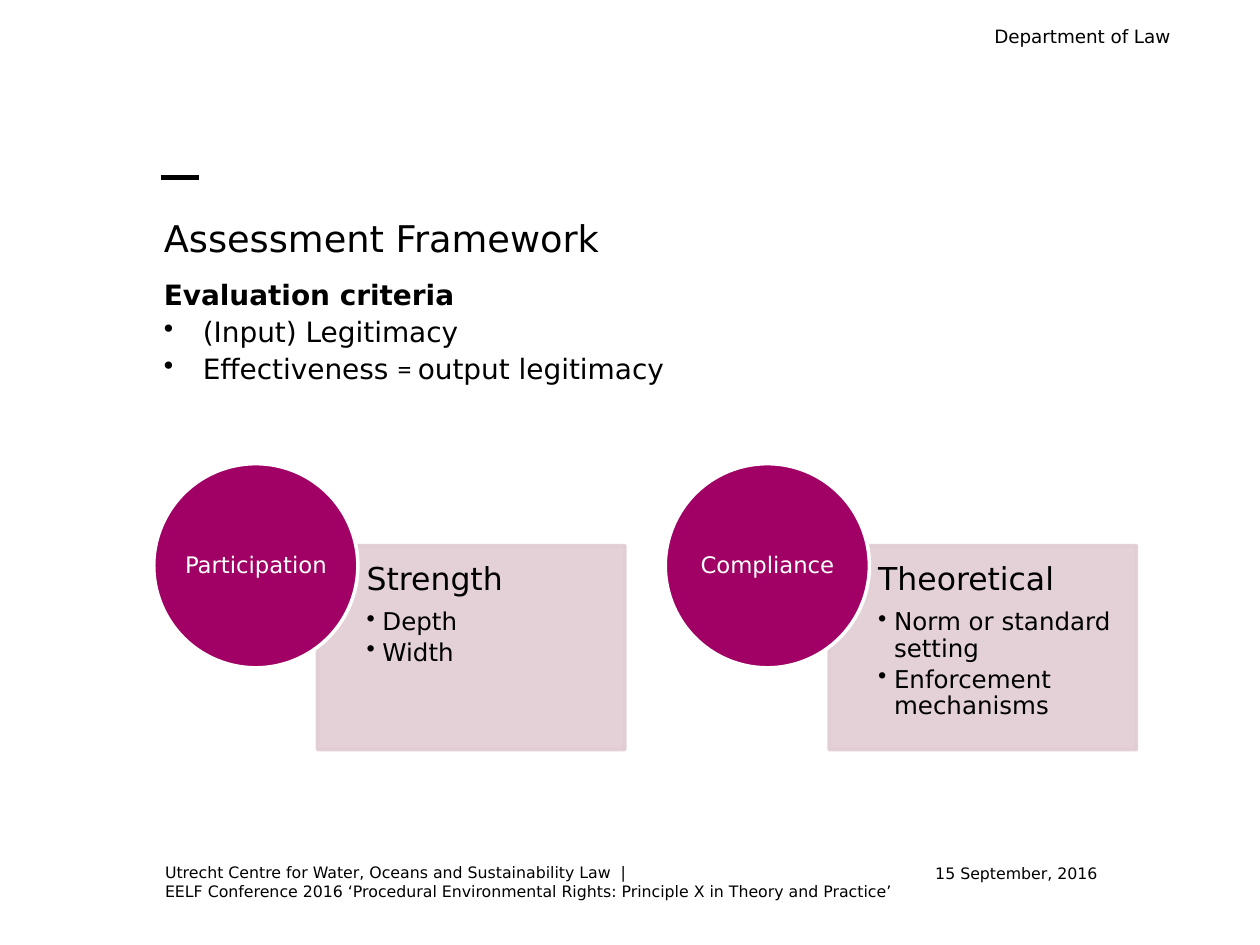
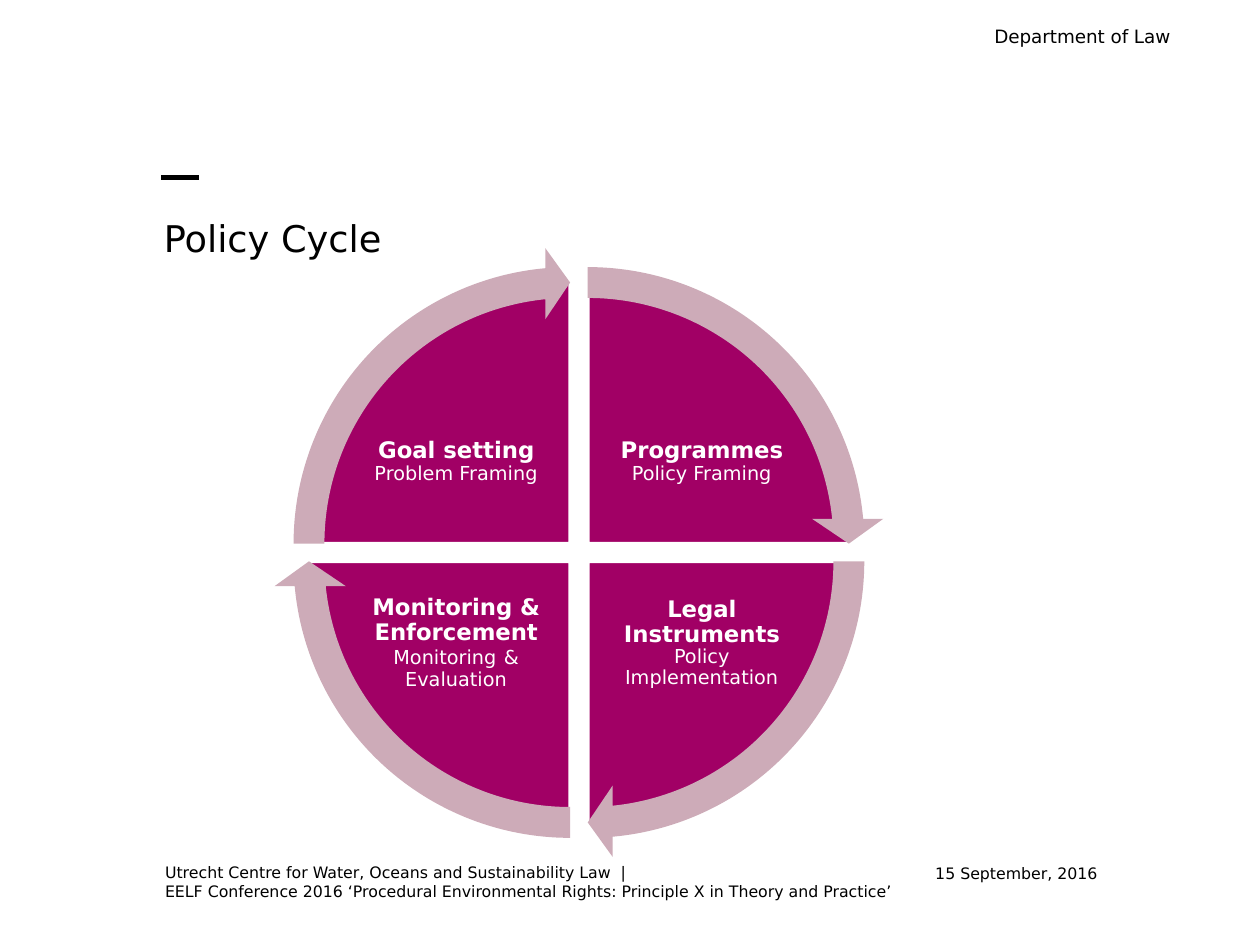
import lxml.etree
import pptx
import pptx.dml.color
import pptx.enum.shapes
import pptx.enum.text
import pptx.oxml.ns
import pptx.util

RGBColor = pptx.dml.color.RGBColor
SHAPE = pptx.enum.shapes.MSO_SHAPE
ALIGN = pptx.enum.text.PP_ALIGN
ANCHOR = pptx.enum.text.MSO_ANCHOR
qn = pptx.oxml.ns.qn

BLACK = RGBColor(0x00, 0x00, 0x00)
WHITE = RGBColor(0xFF, 0xFF, 0xFF)
MAGENTA = RGBColor(0xA1, 0x00, 0x65)
PALE_PINK = RGBColor(0xE0, 0xCC, 0xD3)
DUSTY_PINK = RGBColor(0xCD, 0xAB, 0xB8)

FONT = "DejaVu Sans"

deck = pptx.Presentation()
deck.slide_width = pptx.util.Inches(10)
deck.slide_height = pptx.util.Inches(7.5)
CELL = deck.slide_width / 100  # the slide is 100 columns by 75 rows


def grid(*cells):
    return [round(cell * CELL) for cell in cells]


def write(box, *paragraphs, size, color=BLACK, bold=False, align=ALIGN.LEFT,
          anchor=ANCHOR.TOP, insets=(0, 0, 0, 0), spacing=1.0,
          hang=0, after=(0, 0)):
    """Fill a box; a paragraph is a list of (text, changes). With hang, all but the first get bullets."""
    frame = box.text_frame
    frame.word_wrap = True
    frame.vertical_anchor = anchor
    (frame.margin_left, frame.margin_top,
     frame.margin_right, frame.margin_bottom) = grid(*insets)
    for index, runs in enumerate(paragraphs):
        paragraph = frame.add_paragraph() if index else frame.paragraphs[0]
        if hang and index:
            props = paragraph._p.get_or_add_pPr()
            props.set("marL", str(grid(hang)[0]))
            props.set("indent", str(-grid(hang)[0]))
            lxml.etree.SubElement(props, qn("a:buChar")).set("char", "•")
        paragraph.alignment = align
        paragraph.line_spacing = spacing
        paragraph.space_after = pptx.util.Pt(after[min(index, 1)])
        for text, changes in runs:
            run = paragraph.add_run()
            run.text = text
            run.font.name = changes.get("font", FONT)
            run.font.size = pptx.util.Pt(changes.get("size", size))
            run.font.bold = changes.get("bold", bold)
            run.font.color.rgb = color


# What both slides share: dash, title, department, date and footer
slides = []
for title in ("Assessment Framework", "Policy Cycle"):
    slide = deck.slides.add_slide(deck.slide_layouts[6])
    slides.append(slide)
    shapes = slide.shapes

    dash = shapes.add_connector(pptx.enum.shapes.MSO_CONNECTOR.STRAIGHT,
                                *grid(12.8, 14.1, 15.8, 14.1))
    dash.line.color.rgb = BLACK
    dash.line.width = pptx.util.Pt(3.25)
    lxml.etree.SubElement(dash._element.spPr, qn("a:effectLst"))

    write(shapes.add_textbox(*grid(13, 17.1, 79.9, 10)), [(title, {})], size=21)
    write(shapes.add_textbox(*grid(54.3, 1.8, 38.6, 4.3)),
          [("Department of Law", {})], size=10.5, align=ALIGN.RIGHT, spacing=1.1)
    write(shapes.add_textbox(*grid(63.8, 67.3, 23.3, 4)),
          [("15 September, 2016", {})], size=9, align=ALIGN.RIGHT, anchor=ANCHOR.MIDDLE)
    write(shapes.add_textbox(*grid(13.1, 68.5, 58.2, 4)),
          [("Utrecht Centre for Water, Oceans and Sustainability Law  |", {})],
          [("EELF Conference 2016 ‘Procedural Environmental Rights: "
            "Principle X in Theory and Practice’", {})], size=9)

framework, cycle = slides

# Assessment framework: evaluation criteria
write(framework.shapes.add_textbox(*grid(13, 21.8, 79.9, 33.3)),
      [("Evaluation criteria", {"bold": True})],
      [("(Input) Legitimacy", {})],
      [("Effectiveness ", {}), ("= ", {"font": "Calibri"}), ("output legitimacy", {})],
      size=16, spacing=1.1, hang=3.1)

# Assessment framework: a circle over the corner of a panel, twice
CRITERIA = [
    ("Participation", "Strength", ["Depth", "Width"]),
    ("Compliance", "Theoretical", ["Norm or standard setting", "Enforcement mechanisms"]),
]
for column, (criterion, heading, points) in enumerate(CRITERIA):
    left = 12.2 + 40.6 * column

    panel = framework.shapes.add_shape(SHAPE.RECTANGLE, *grid(left + 13, 43.3, 24.4, 16.2))
    panel.shadow.inherit = False
    panel.fill.solid()
    panel.fill.fore_color.rgb = PALE_PINK
    panel.line.color.rgb = PALE_PINK
    panel.line.width = pptx.util.Pt(2)
    for tint in panel._element.spPr.iter(qn("a:srgbClr")):
        lxml.etree.SubElement(tint, qn("a:alpha")).set("val", "90000")
    write(framework.shapes.add_textbox(*grid(left + 16.9, 43.3, 20.5, 16.2)),
          [(heading, {"size": 18})], *[[(point, {})] for point in points],
          size=14, insets=(0, 1.4, 1.4, 1.4), spacing=0.9, hang=1.25, after=(7, 2.5))

    circle = framework.shapes.add_shape(SHAPE.OVAL, *grid(left, 36.8, 16.2, 16.2))
    circle.shadow.inherit = False
    circle.fill.solid()
    circle.fill.fore_color.rgb = MAGENTA
    circle.line.color.rgb = WHITE
    circle.line.width = pptx.util.Pt(2)
    write(framework.shapes.add_textbox(*grid(left + 2.35, 39.15, 11.5, 11.5)),
          [(criterion, {})], size=13, color=WHITE, align=ALIGN.CENTER,
          anchor=ANCHOR.MIDDLE, spacing=0.9)

# Policy cycle: clockwise from the top right; side and level are -1 or 1
SMALL = {"size": 11, "bold": False}
SPACE = {"bold": False}
PHASES = [
    (1, -1, [("Programmes ", {}), ("Policy Framing", SMALL)]),
    (1, 1, [("Legal Instruments ", {}), ("Policy Implementation", SMALL)]),
    (-1, 1, [("Monitoring & Enforcement ", {}), ("Monitoring", SMALL), (" ", SPACE),
             ("&", SMALL), (" ", SPACE), ("Evaluation", SMALL)]),
    (-1, -1, [("Goal setting ", {}), ("Problem Framing", SMALL)]),
]
QUARTER = 54  # a quarter turn, in units of 100000 / 60000 degrees
HEAD = 3.275  # angle taken by an arrowhead
PIE, RING = 41.9, 47.1
CENTRE_X, CENTRE_Y, SHIFT = 45.95, 43.85, 0.7

for turn, (side, level, label) in enumerate(PHASES):
    start = (turn + 3) % 4 * QUARTER
    end = (start + QUARTER) % (4 * QUARTER)
    quadrant = cycle.shapes.add_shape(SHAPE.PIE, *grid(
        CENTRE_X + side * SHIFT - PIE / 2, CENTRE_Y + level * SHIFT - PIE / 2, PIE, PIE))
    quadrant.shadow.inherit = False
    quadrant.adjustments[0], quadrant.adjustments[1] = start, end
    quadrant.fill.solid()
    quadrant.fill.fore_color.rgb = MAGENTA
    quadrant.line.color.rgb = WHITE
    quadrant.line.width = pptx.util.Pt(2)
    write(cycle.shapes.add_textbox(*grid(
              CENTRE_X + side * 9.75 - 7.75, CENTRE_Y + level * 7.2 - 5.75, 15.5, 11.5)),
          label, size=13, color=WHITE, bold=True, align=ALIGN.CENTER,
          anchor=ANCHOR.MIDDLE, insets=(0.2, 0.2, 0.2, 0.2), spacing=0.9)

# Policy cycle: the arrows lie over all quadrants
for turn, (side, level, _) in enumerate(PHASES):
    start = (turn + 3) % 4 * QUARTER
    arrow = cycle.shapes.add_shape(SHAPE.CIRCULAR_ARROW, *grid(
        CENTRE_X + side * SHIFT - RING / 2, CENTRE_Y + level * SHIFT - RING / 2, RING, RING))
    arrow.shadow.inherit = False
    for index, value in enumerate((0.052, HEAD, start + QUARTER - HEAD, start, 0.06)):
        arrow.adjustments[index] = value
    arrow.fill.solid()
    arrow.fill.fore_color.rgb = DUSTY_PINK
    arrow.line.fill.background()

deck.save("out.pptx")
